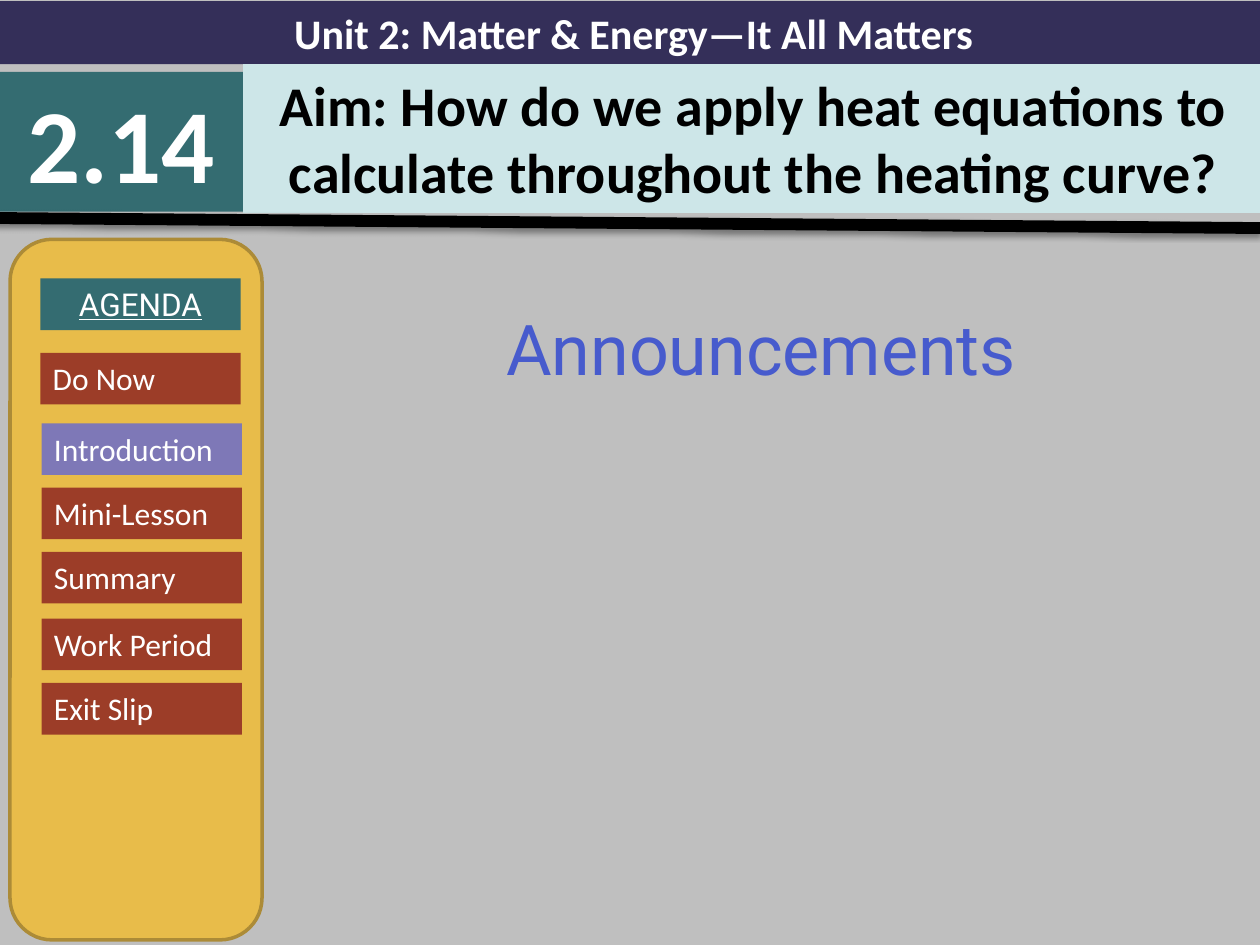
from lxml.etree import SubElement
from pptx import Presentation
from pptx.dml.color import RGBColor
from pptx.enum.shapes import MSO_CONNECTOR, MSO_SHAPE
from pptx.enum.text import MSO_ANCHOR, MSO_AUTO_SIZE, PP_ALIGN
from pptx.oxml.ns import qn
from pptx.util import Inches, Pt


def color(value):
    return RGBColor.from_string(value)


def add_box(shapes, left, top, width, height, fill, text, size,
            align=PP_ALIGN.LEFT, bold=False, font="Calibri", text_color="FFFFFF"):
    shape = shapes.add_shape(MSO_SHAPE.RECTANGLE, Inches(left), Inches(top),
                             Inches(width), Inches(height))
    shape.shadow.inherit = False
    shape.fill.solid()
    shape.fill.fore_color.rgb = color(fill)
    shape.line.fill.background()
    frame = shape.text_frame
    frame.word_wrap = True
    frame.auto_size = MSO_AUTO_SIZE.SHAPE_TO_FIT_TEXT
    frame.vertical_anchor = MSO_ANCHOR.TOP
    paragraph = frame.paragraphs[0]
    paragraph.text = text
    paragraph.alignment = align
    paragraph.font.name = font
    paragraph.font.size = Pt(size)
    paragraph.font.bold = bold
    paragraph.font.color.rgb = color(text_color)
    return shape


presentation = Presentation()
presentation.slide_width = Inches(10)
presentation.slide_height = Inches(7.5)
slide = presentation.slides.add_slide(presentation.slide_layouts[6])
slide.background.fill.solid()
slide.background.fill.fore_color.rgb = color("BFBFBF")

announcements = slide.shapes.add_textbox(Inches(2.08), Inches(2.04), Inches(7.92), Inches(5.46))
announcements.text_frame.word_wrap = True
paragraph = announcements.text_frame.paragraphs[0]
paragraph.text = "Announcements"
paragraph.alignment = PP_ALIGN.CENTER
paragraph.line_spacing = 1.5
paragraph.space_before = Pt(8)
paragraph.font.name = "Roboto"
paragraph.font.size = Pt(40)
paragraph.font.color.rgb = color("475BCD")

headers = [
    (0, 0.01, 10.06, 0.5, "342F59", "Unit 2: Matter & Energy—It All Matters", 24, "FFFFFF"),
    (0, 0.57, 1.93, 1.11, "346C71", "2.14", 60, "FFFFFF"),
    (1.93, 0.51, 8.1, 1.18, "CDE6E8",
     "Aim: How do we apply heat equations to calculate throughout the heating curve?",
     32, "000000"),
]
for left, top, width, height, fill, text, size, text_color in headers:
    add_box(slide.shapes, left, top, width, height, fill, text, size,
            PP_ALIGN.CENTER, bold=True, text_color=text_color)

divider = slide.shapes.add_connector(MSO_CONNECTOR.STRAIGHT, Inches(-0.05), Inches(1.73),
                                     Inches(10), Inches(1.81))
divider.line.color.rgb = color("000000")
divider.line.width = Pt(6.75)
effects = SubElement(divider.element.spPr, qn("a:effectLst"))
shadow = SubElement(effects, qn("a:outerShdw"), blurRad=str(Pt(3.1)), dist=str(Pt(1.6)),
                    dir="5400000", rotWithShape="0")
shadow_color = SubElement(shadow, qn("a:srgbClr"), val="000000")
SubElement(shadow_color, qn("a:alpha"), val="38000")

agenda = slide.shapes.add_group_shape()
panel = agenda.shapes.add_shape(MSO_SHAPE.ROUNDED_RECTANGLE, Inches(0.08), Inches(1.9),
                                Inches(2), Inches(5.56))
panel.shadow.inherit = False
panel.fill.solid()
panel.fill.fore_color.rgb = color("E8BC4A")
panel.line.color.rgb = color("AC8B37")
panel.line.width = Pt(2)

heading = add_box(agenda.shapes, 0.32, 2.21, 1.59, 0.41, "346C71", "AGENDA", 18,
                  PP_ALIGN.CENTER, font="Roboto")
heading.text_frame.paragraphs[0].font.underline = True

steps = [
    ("Do Now", 0.32, 2.8, "9C3D28"),
    ("Introduction", 0.33, 3.36, "7E78B7"),
    ("Mini-Lesson", 0.33, 3.87, "9C3D28"),
    ("Summary", 0.33, 4.38, "9C3D28"),
    ("Work Period", 0.33, 4.91, "9C3D28"),
    ("Exit Slip", 0.33, 5.42, "9C3D28"),
]
for text, left, top, fill in steps:
    add_box(agenda.shapes, left, top, 1.59, 0.41, fill, text, 18)

presentation.save("out.pptx")
